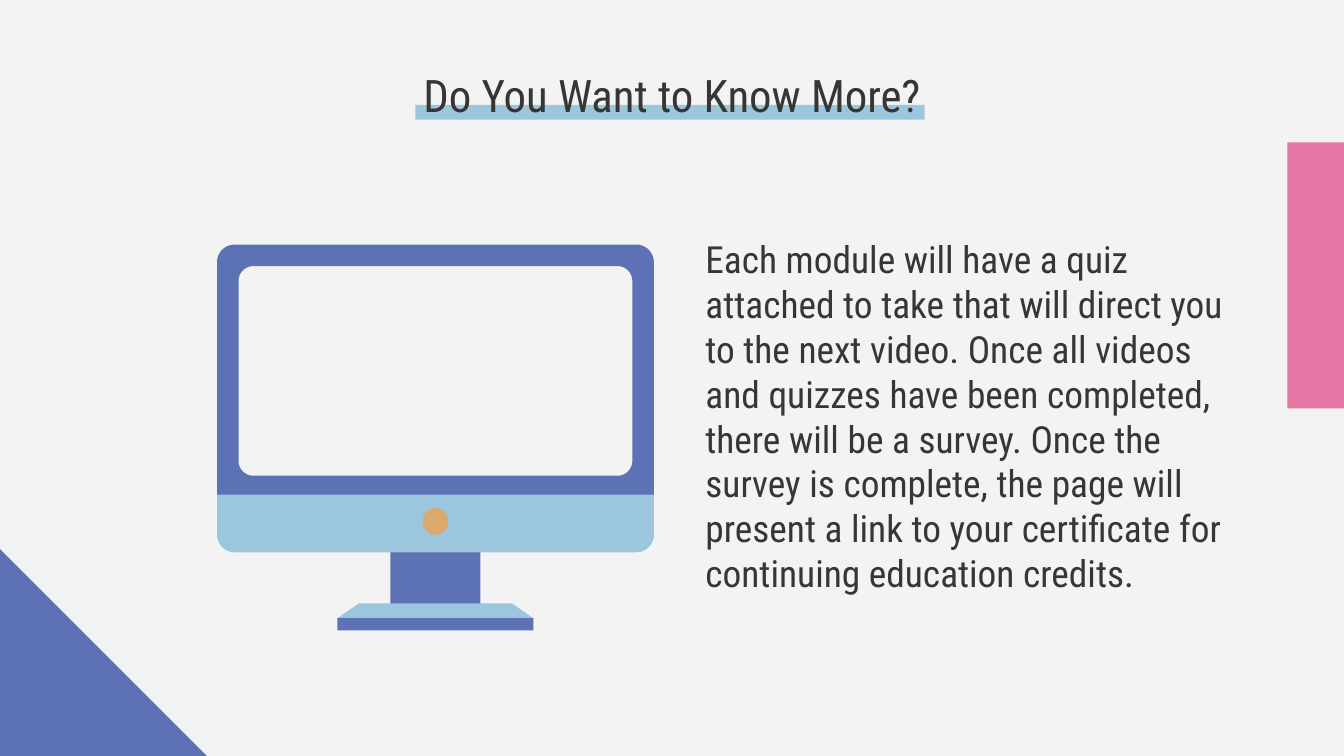
import math
import pptx
import pptx.util
import pptx.dml.color
import pptx.enum.shapes
import pptx.enum.text

Inch = pptx.util.Inches
Kind = pptx.enum.shapes.MSO_SHAPE
Text = pptx.enum.text

BLUE, SKY, PINK, GOLD = "5C72B4", "9CC6DE", "E477A3", "DBA96B"
PAPER, INK = "F3F3F3", "363636"
FONT = "Roboto Condensed"
WIDE, HIGH = 10, 5.625
MID = 3.24  # centre line of the monitor
SPAN = 3.25  # width of the monitor
ROUND = 0.13  # corner radius of the monitor

TITLE = "Do You Want to Know More?"
BODY = (
    "Each module will have a quiz attached to take that will direct you "
    "to the next video. Once all videos and quizzes have been completed, "
    "there will be a survey. Once the survey is complete, the page will "
    "present a link to your certificate for continuing education credits."
)


def paint(fill, color):
    fill.solid()
    fill.fore_color.rgb = pptx.dml.color.RGBColor.from_string(color)


def finish(shape, color):
    paint(shape.fill, color)
    shape.line.fill.background()
    shape.shadow.inherit = False


def block(slide, kind, left, top, width, height, color, adjust=()):
    shape = slide.shapes.add_shape(
        kind, Inch(left), Inch(top), Inch(width), Inch(height))
    for i, value in enumerate(adjust):
        shape.adjustments[i] = value
    finish(shape, color)
    return shape


def center(slide, kind, top, width, height, color, adjust=()):
    """Place a part symmetrically on the monitor's centre line."""
    return block(slide, kind, MID - width / 2, top, width, height, color, adjust)


def ring(left, top, width, height, radius, steps=12):
    """Points of a rounded rectangle in EMU, clockwise from its right side."""
    points = []
    for turn, (right, low) in enumerate([(1, 1), (0, 1), (0, 0), (1, 0)]):
        x = left + (width - radius if right else radius)
        y = top + (height - radius if low else radius)
        for i in range(steps + 1):
            angle = math.pi / 2 * (turn + i / steps)
            points.append((Inch(x + radius * math.cos(angle)),
                           Inch(y + radius * math.sin(angle))))
    return points


def frame(slide, outer, inner, color):
    """Draw a closed outline with a hole in it."""
    build = slide.shapes.build_freeform(*outer[0])
    build.add_line_segments(outer[1:], close=True)
    hole = inner[::-1]
    build.move_to(*hole[0])
    build.add_line_segments(hole[1:], close=True)
    finish(build.convert_to_shape(), color)


def write(shape, text, size, align, left, top, width, height):
    shape.left, shape.top = Inch(left), Inch(top)
    shape.width, shape.height = Inch(width), Inch(height)
    box = shape.text_frame
    box.text = text
    box.word_wrap = True
    box.auto_size = Text.MSO_AUTO_SIZE.NONE
    box.vertical_anchor = Text.MSO_ANCHOR.TOP
    box.margin_left = box.margin_right = Inch(0.1)
    box.margin_top = box.margin_bottom = Inch(0.1)
    line = box.paragraphs[0]
    line.alignment = align
    font = line.runs[0].font
    font.name, font.size = FONT, pptx.util.Pt(size)
    font.color.rgb = pptx.dml.color.RGBColor.from_string(INK)


def screen(slide):
    left = MID - SPAN / 2
    frame(slide, ring(left, 1.82, SPAN, 2.28, ROUND),
          ring(left + 0.16, 1.98, SPAN - 0.32, 1.56, 0.11), BLUE)
    # Stand: neck, sloped base and foot
    center(slide, Kind.RECTANGLE, 3.81, 0.67, 0.74, BLUE)
    center(slide, Kind.TRAPEZOID, 4.49, 1.46, 0.11, SKY, [0.16 / 0.11])
    center(slide, Kind.RECTANGLE, 4.6, 1.46, 0.09, BLUE)
    # Chin, turned so that its round corners are below
    chin = center(slide, Kind.ROUND_2_SAME_RECTANGLE, 3.68, SPAN, 0.43,
                  SKY, [ROUND / 0.43, 0])
    chin.rotation = 180
    center(slide, Kind.OVAL, 3.78, 0.19, 0.2, GOLD)


def main():
    deck = pptx.Presentation()
    deck.slide_width, deck.slide_height = Inch(WIDE), Inch(HIGH)
    slide = deck.slides.add_slide(deck.slide_layouts[5])
    paint(slide.background.fill, PAPER)

    # Corner, edge and title bar
    block(slide, Kind.RIGHT_TRIANGLE, 0, HIGH - 1.54, 1.54, 1.54, BLUE)
    block(slide, Kind.RECTANGLE, 9.58, 1.06, 0.53, 1.98, PINK)
    block(slide, Kind.RECTANGLE, 3.09, 0.78, 3.79, 0.11, SKY)

    # Title, brought in front of its bar
    title = slide.shapes.title
    slide.shapes._spTree.append(title._element)
    write(title, TITLE, 24, Text.PP_ALIGN.CENTER, 0.34, 0.4, 9.32, 0.63)

    # Body text
    body = slide.shapes.add_textbox(0, 0, 0, 0)
    write(body, BODY, 20, Text.PP_ALIGN.LEFT, 5.15, 1.66, 4.19, 1.5)

    screen(slide)
    deck.save("out.pptx")


if __name__ == "__main__":
    main()
